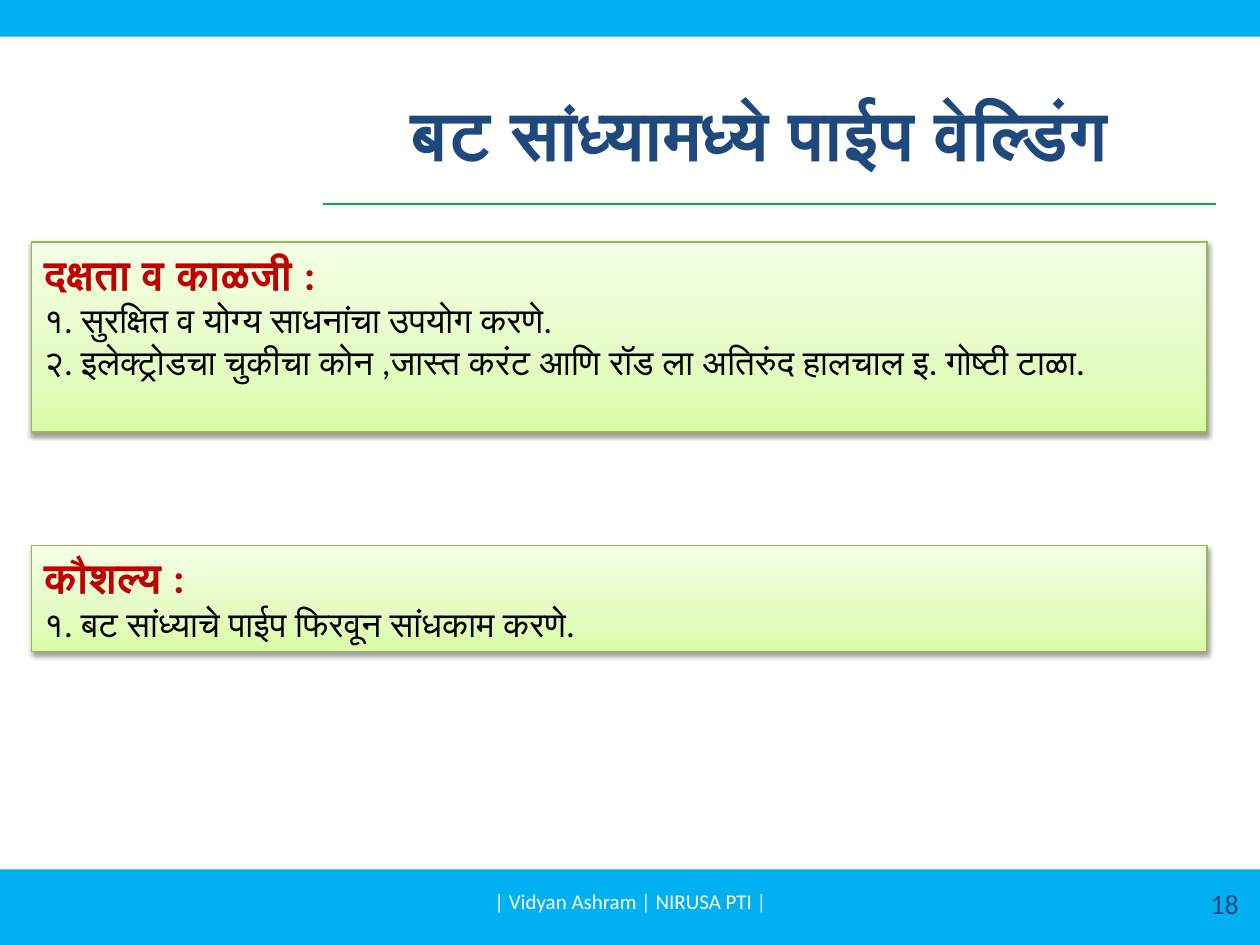
from lxml.etree import fromstring
from pptx import Presentation
from pptx.dml.color import RGBColor
from pptx.enum.shapes import MSO_CONNECTOR, MSO_SHAPE
from pptx.enum.text import MSO_ANCHOR, PP_ALIGN
from pptx.oxml.ns import nsdecls
from pptx.util import Inches, Pt

WIDTH, HEIGHT = 10, 7.5
FONT = "Calibri"
COLORS = {
    "band": "00B0F0", "rule": "00B050", "title": "1F497D", "heading": "C00000",
    "body": "000000", "footer": "FFFFFF", "border": "98B955", "shadow": "000000",
}
PANEL_GRADIENT = [(0, "DAFDA7"), (35, "E4FCC2"), (100, "F5FFE7")]

TITLE = "बट सांध्यामध्ये पाईप वेल्डिंग"
BANDS = [(0, 0.29), (6.9, 0.6)]  # top, height
PANEL_LEFT, PANEL_WIDTH = 0.25, 9.33
PANELS = [
    {"top": 1.92, "height": 1.51, "heading": "दक्षता व काळजी :",
     "points": ["१. सुरक्षित व योग्य साधनांचा उपयोग करणे.",
                "२. इलेक्ट्रोडचा चुकीचा कोन ,जास्त करंट आणि रॉड ला अतिरुंद हालचाल इ. गोष्टी टाळा."]},
    {"top": 4.33, "height": 0.84, "heading": "कौशल्य :",
     "points": ["१. बट सांध्याचे पाईप फिरवून सांधकाम करणे."]},
]
FOOTERS = [  # text, box, size, color, alignment
    ("18", (7.6, 6.97, 2.33, 0.4), 16, "title", PP_ALIGN.RIGHT),
    ("| Vidyan Ashram | NIRUSA PTI |", (3.42, 6.95, 3.17, 0.4), 12, "footer", PP_ALIGN.CENTER),
]


def rgb(name):
    return RGBColor.from_string(COLORS[name])


def inches(*lengths):
    return [Inches(length) for length in lengths]


def write(paragraph, text, size, color, bold=False, align=PP_ALIGN.LEFT):
    paragraph.text = text
    paragraph.alignment = align
    for run in paragraph.runs:
        font = run.font
        font.name, font.size, font.bold = FONT, Pt(size), bold
        font.color.rgb = rgb(color)


def add_rectangle(slide, box):
    rectangle = slide.shapes.add_shape(MSO_SHAPE.RECTANGLE, *inches(*box))
    rectangle.shadow.inherit = False
    return rectangle


def style_panel(panel):
    """Give the panel its upward gradient, thin border and soft shadow."""
    panel.line.color.rgb = rgb("border")
    panel.line.width = Pt(0.75)
    stops = "".join(f'<a:gs pos="{share * 1000}"><a:srgbClr val="{color}"/></a:gs>'
                    for share, color in PANEL_GRADIENT)
    gradient = fromstring(
        f'<a:gradFill {nsdecls("a")} rotWithShape="1"><a:gsLst>{stops}</a:gsLst>'
        '<a:lin ang="16200000" scaled="0"/></a:gradFill>')
    shadow = fromstring(
        f'<a:outerShdw {nsdecls("a")} blurRad="{Pt(3.1)}" dist="{Pt(1.6)}" dir="5400000" '
        f'rotWithShape="0"><a:srgbClr val="{COLORS["shadow"]}"><a:alpha val="38000"/>'
        '</a:srgbClr></a:outerShdw>')
    properties = panel.element.spPr
    properties.find("{*}prstGeom").addnext(gradient)
    properties.find("{*}effectLst").append(shadow)


def add_panel(slide, content):
    panel = add_rectangle(slide, (PANEL_LEFT, content["top"], PANEL_WIDTH, content["height"]))
    style_panel(panel)
    frame = panel.text_frame
    frame.word_wrap = True
    frame.vertical_anchor = MSO_ANCHOR.TOP
    write(frame.paragraphs[0], content["heading"], 24, "heading", bold=True)
    for point in content["points"]:
        write(frame.add_paragraph(), point, 20, "body")


def main():
    deck = Presentation()
    deck.slide_width, deck.slide_height = inches(WIDTH, HEIGHT)
    slide = deck.slides.add_slide(deck.slide_layouts[5])

    title = slide.shapes.title
    title.left, title.top, title.width, title.height = inches(2.05, 0.25, 7.95, 1.61)
    title.text_frame.vertical_anchor = MSO_ANCHOR.MIDDLE
    write(title.text_frame.paragraphs[0], TITLE, 40, "title", bold=True, align=PP_ALIGN.CENTER)

    for top, height in BANDS:
        band = add_rectangle(slide, (0, top, WIDTH, height))
        band.fill.solid()
        band.fill.fore_color.rgb = rgb("band")
        band.line.fill.background()

    rule = slide.shapes.add_connector(MSO_CONNECTOR.STRAIGHT, *inches(2.56, 1.62, 9.65, 1.62))
    rule.line.color.rgb = rgb("rule")
    rule.line.width = Pt(0.75)
    rule.element.spPr.append(fromstring(f'<a:effectLst {nsdecls("a")}/>'))

    for text, box, size, color, align in FOOTERS:
        footer = slide.shapes.add_textbox(*inches(*box)).text_frame
        footer.word_wrap = True
        footer.vertical_anchor = MSO_ANCHOR.MIDDLE
        write(footer.paragraphs[0], text, size, color, align=align)

    for content in PANELS:
        add_panel(slide, content)

    deck.save("out.pptx")


if __name__ == "__main__":
    main()
